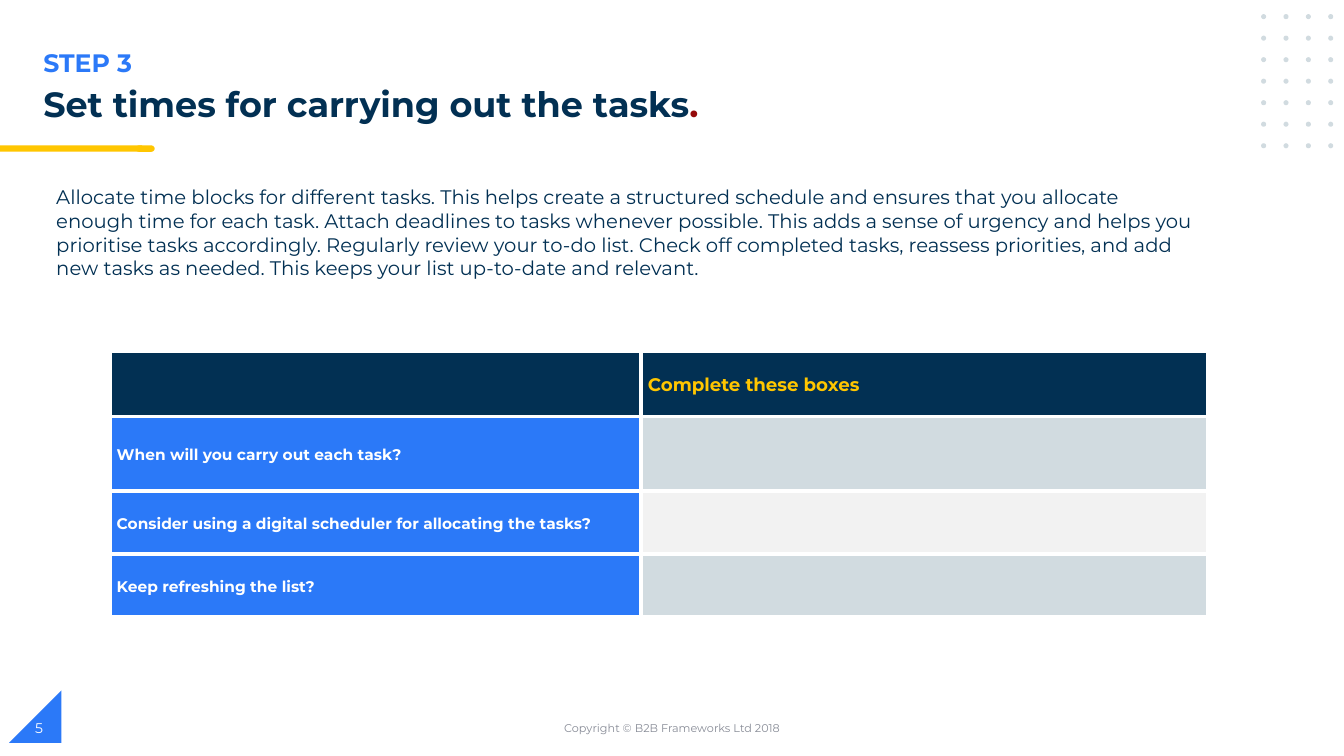
from pptx import Presentation
from pptx.dml.color import RGBColor
from pptx.enum.shapes import MSO_SHAPE
from pptx.enum.text import MSO_ANCHOR, PP_ALIGN
from pptx.oxml import parse_xml
from pptx.oxml.ns import nsdecls
from pptx.util import Pt
from dataclasses import dataclass
from itertools import product


@dataclass(frozen=True)
class Theme:
    font: str = "Montserrat"
    navy: str = "023053"
    blue: str = "2B79F8"
    yellow: str = "FFC600"
    red: str = "950A0A"
    mist: str = "D1DBE0"
    pale: str = "F2F2F2"
    grey: str = "888C97"
    white: str = "FFFFFF"
    title_size: float = 25
    step_size: float = 18
    body_size: float = 14
    header_size: float = 13
    label_size: float = 11
    number_size: float = 10
    footer_size: float = 8


theme = Theme()

STEP = "STEP 3"
TITLE = "Set times for carrying out the tasks"
BODY = (
    "Allocate time blocks for different tasks. This helps create a structured schedule "
    "and ensures that you allocate enough time for each task. Attach deadlines to tasks "
    "whenever possible. This adds a sense of urgency and helps you prioritise tasks "
    "accordingly. Regularly review your to-do list. Check off completed tasks, reassess "
    "priorities, and add new tasks as needed. This keeps your list up-to-date and relevant."
)
COPYRIGHT = "Copyright © B2B Frameworks Ltd 2018"
PAGE_NUMBER = "5"
TABLE_HEADER = "Complete these boxes"
QUESTIONS = [
    "When will you carry out each task?",
    "Consider using a digital scheduler for allocating the tasks?",
    "Keep refreshing the list?",
]
COLUMN_WIDTHS = [379.5, 404.5]
ROW_HEIGHTS = [46.8, 53.3, 44.8, 45.3]
DOT_COLUMNS, DOT_ROWS = 4, 7
DOT_SIZE = 3.6


def points(*lengths):
    return [Pt(length) for length in lengths]


def write(paragraph, text, size, color, bold=False, align=PP_ALIGN.LEFT, spacing=None):
    paragraph.alignment = align
    if spacing:
        paragraph.line_spacing = spacing
    run = paragraph.add_run()
    run.text = text
    run.font.name = theme.font
    run.font.size = Pt(size)
    run.font.bold = bold
    run.font.color.rgb = RGBColor.from_string(color)


def add_text(slide, box, text, anchor=MSO_ANCHOR.TOP, **style):
    frame = slide.shapes.add_textbox(*points(*box)).text_frame
    frame.word_wrap = True
    frame.vertical_anchor = anchor
    write(frame.paragraphs[0], text, **style)


def add_block(slide, kind, box, color):
    shape = slide.shapes.add_shape(kind, *points(*box))
    shape.shadow.inherit = False
    shape.fill.solid()
    shape.fill.fore_color.rgb = RGBColor.from_string(color)
    shape.line.fill.background()
    return shape


def add_decoration(slide):
    corner = add_block(slide, MSO_SHAPE.RIGHT_TRIANGLE, (6.5, 493.2, 37.4, 37.4), theme.blue)
    corner._element.spPr.xfrm.set("flipH", "1")
    add_block(slide, MSO_SHAPE.FLOWCHART_TERMINATOR, (96.8, 103.9, 13.7, 4.5), theme.yellow)
    add_block(slide, MSO_SHAPE.RECTANGLE, (0, 103.9, 101.5, 4.5), theme.yellow)
    for row, column in product(range(DOT_ROWS), range(DOT_COLUMNS)):
        box = (900.8 + 15.98 * column, 10.1 + 15.37 * row, DOT_SIZE, DOT_SIZE)
        add_block(slide, MSO_SHAPE.OVAL, box, theme.mist)


def add_title(slide):
    title = slide.shapes.title
    title.left, title.top, title.width, title.height = points(23.8, 59, 851.8, 40.3)
    title.text_frame.vertical_anchor = MSO_ANCHOR.TOP
    paragraph = title.text_frame.paragraphs[0]
    for text, color in ((TITLE, theme.navy), (".", theme.red)):
        write(paragraph, text, theme.title_size, color, bold=True, spacing=0.9)


def format_cell(cell, color):
    properties = cell._tc.get_or_add_tcPr()
    for side in ("lnL", "lnR", "lnT", "lnB"):
        properties.append(parse_xml(
            f'<a:{side} {nsdecls("a")} w="{Pt(3)}"><a:solidFill>'
            f'<a:srgbClr val="{theme.white}"/></a:solidFill></a:{side}>'
        ))
    cell.fill.solid()
    cell.fill.fore_color.rgb = RGBColor.from_string(color)
    cell.vertical_anchor = MSO_ANCHOR.MIDDLE
    cell.margin_left = cell.margin_right = Pt(4.9)
    cell.margin_top = cell.margin_bottom = 0


def add_task_table(slide):
    box = points(78.5, 250.6, sum(COLUMN_WIDTHS), sum(ROW_HEIGHTS))
    table = slide.shapes.add_table(len(ROW_HEIGHTS), len(COLUMN_WIDTHS), *box).table
    table.first_row = table.horz_banding = False
    for column, width in zip(table.columns, COLUMN_WIDTHS):
        column.width = Pt(width)
    for row, height in zip(table.rows, ROW_HEIGHTS):
        row.height = Pt(height)
    for column in range(len(COLUMN_WIDTHS)):
        format_cell(table.cell(0, column), theme.navy)
    write(table.cell(0, 1).text_frame.paragraphs[0], TABLE_HEADER,
          theme.header_size, theme.yellow, bold=True, spacing=1.15)
    for row, question in enumerate(QUESTIONS, start=1):
        label, answer = table.cell(row, 0), table.cell(row, 1)
        format_cell(label, theme.blue)
        format_cell(answer, theme.mist if row % 2 else theme.pale)
        write(label.text_frame.paragraphs[0], question,
              theme.label_size, theme.white, bold=True, spacing=1.15)


def main():
    presentation = Presentation()
    presentation.slide_width, presentation.slide_height = points(960, 540)
    slide = presentation.slides.add_slide(presentation.slide_layouts[5])
    add_decoration(slide)
    add_text(slide, (23.8, 30.2, 481.7, 28.8), STEP,
             size=theme.step_size, color=theme.blue, bold=True)
    add_title(slide)
    add_text(slide, (33.1, 128.9, 828, 74.9), BODY, size=theme.body_size, color=theme.navy)
    add_task_table(slide)
    add_text(slide, (318.2, 505.4, 324, 28.8), COPYRIGHT, anchor=MSO_ANCHOR.MIDDLE,
             size=theme.footer_size, color=theme.grey, align=PP_ALIGN.CENTER)
    add_text(slide, (18, 505.4, 216, 28.8), PAGE_NUMBER, anchor=MSO_ANCHOR.MIDDLE,
             size=theme.number_size, color=theme.white)
    presentation.save("out.pptx")


if __name__ == "__main__":
    main()
